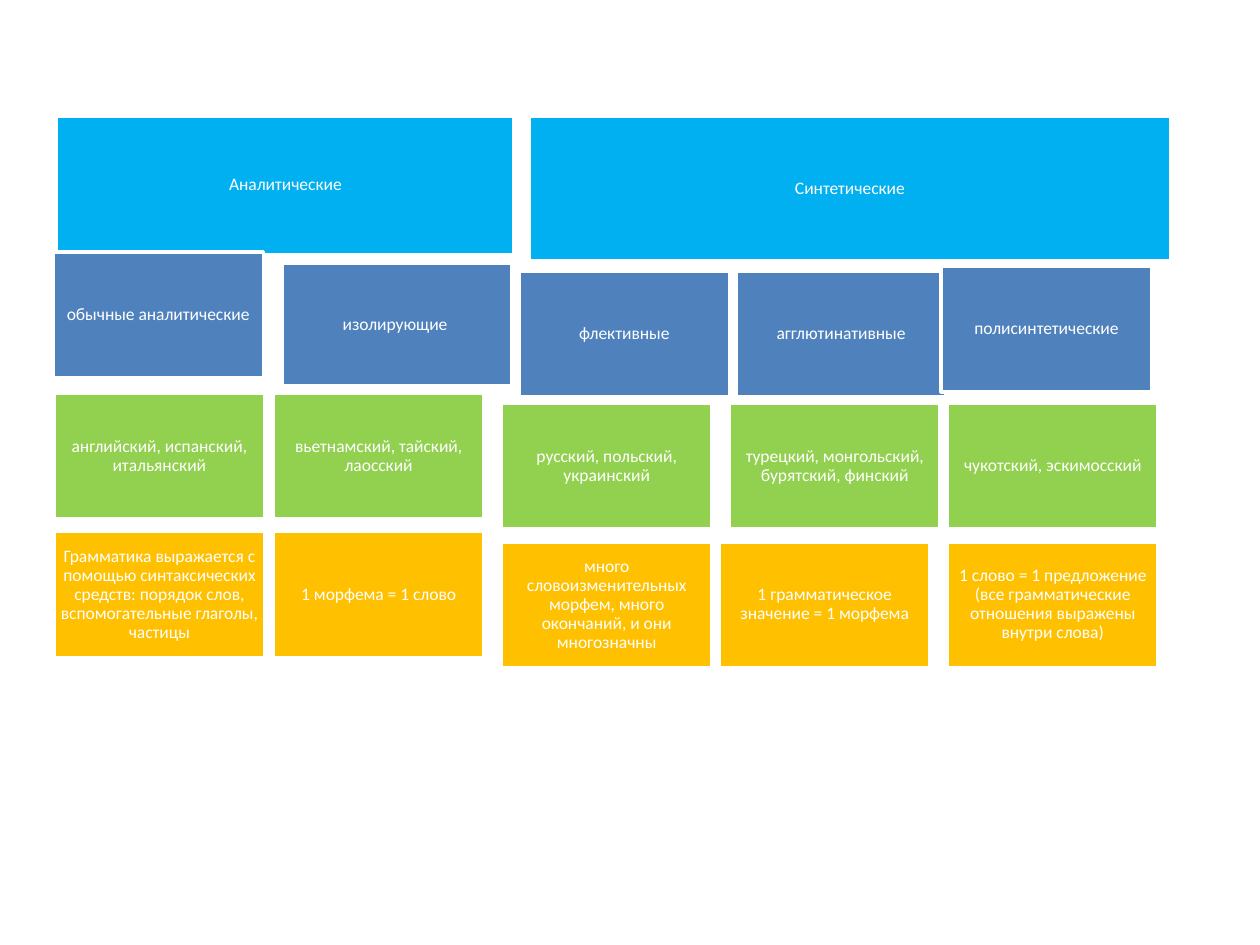
from pptx import Presentation
from pptx.dml.color import RGBColor
from pptx.enum import shapes, text
from pptx.util import Pt

PX = 9144  # EMU per px, 100 px to the inch

WHITE = RGBColor(0xFF, 0xFF, 0xFF)
SKY = RGBColor(0x00, 0xB0, 0xF0)
BLUE = RGBColor(0x4F, 0x81, 0xBD)
GREEN = RGBColor(0x92, 0xD0, 0x50)
GOLD = RGBColor(0xFF, 0xC0, 0x00)

CELL = (167, 100)

# Rows from back to front: colour, then (words, left, top[, size])
ROWS = [
    (SKY, [
        ("Аналитические", 45, 92, (363, 110)),
        ("Синтетические", 420, 92, (509, 115)),
    ]),
    (GREEN, [
        ("английский, испанский, итальянский", 43, 312),
        ("вьетнамский, тайский, лаосский", 217, 312),
        ("русский, польский, украинский", 398, 320),
        ("турецкий, монгольский, бурятский, финский", 579, 320),
        ("чукотский, эскимосский", 752, 320),
    ]),
    (GOLD, [
        ("Грамматика выражается с помощью синтаксических средств: "
         "порядок слов, вспомогательные глаголы, частицы", 43, 422),
        ("1 морфема = 1 слово", 217, 422),
        ("много словоизменительных морфем, много окончаний, "
         "и они многозначны", 398, 430),
        ("1 грамматическое значение = 1 морфема", 571, 430),
        ("1 слово = 1 предложение (все грамматические отношения "
         "выражены внутри слова)", 752, 430),
    ]),
    (BLUE, [
        ("обычные аналитические", 42, 200),
        ("изолирующие ", 224, 209, (182, 97)),
        ("флективные", 412, 215),
        ("агглютинативные", 584, 215),
        ("полисинтетические", 747, 211),
    ]),
]


def add_box(slide, fill, words, left, top, size=CELL):
    box = slide.shapes.add_shape(
        shapes.MSO_SHAPE.RECTANGLE, *(n * PX for n in (left, top, *size)))
    box.shadow.inherit = False
    box.fill.solid()
    box.fill.fore_color.rgb = fill
    box.line.color.rgb = WHITE
    box.line.width = Pt(2)

    # Centred white text with narrow margins
    frame = box.text_frame
    frame.text = words
    frame.word_wrap = True
    frame.vertical_anchor = text.MSO_ANCHOR.MIDDLE
    frame.margin_left = frame.margin_right = 4 * PX
    frame.margin_top = frame.margin_bottom = 4 * PX
    para = frame.paragraphs[0]
    para.alignment = text.PP_ALIGN.CENTER
    para.line_spacing = 0.9
    para.space_after = Pt(3.5)
    font = para.runs[0].font
    font.name = "Calibri"
    font.size = Pt(10)
    font.color.rgb = WHITE


def main():
    deck = Presentation()
    deck.slide_width, deck.slide_height = 1000 * PX, 750 * PX
    slide = deck.slides.add_slide(deck.slide_layouts[6])
    for fill, cells in ROWS:
        for cell in cells:
            add_box(slide, fill, *cell)
    deck.save("out.pptx")


if __name__ == "__main__":
    main()
